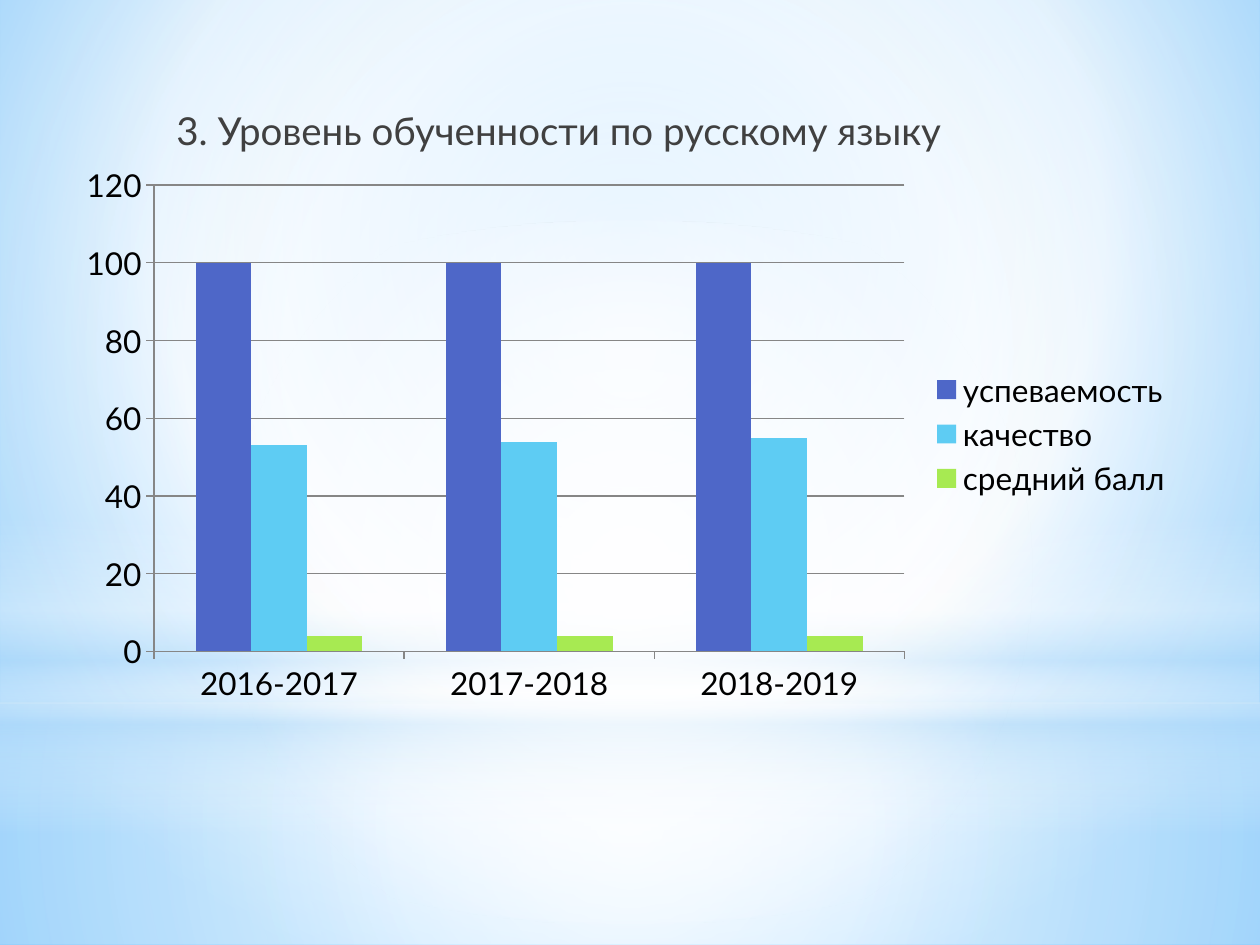
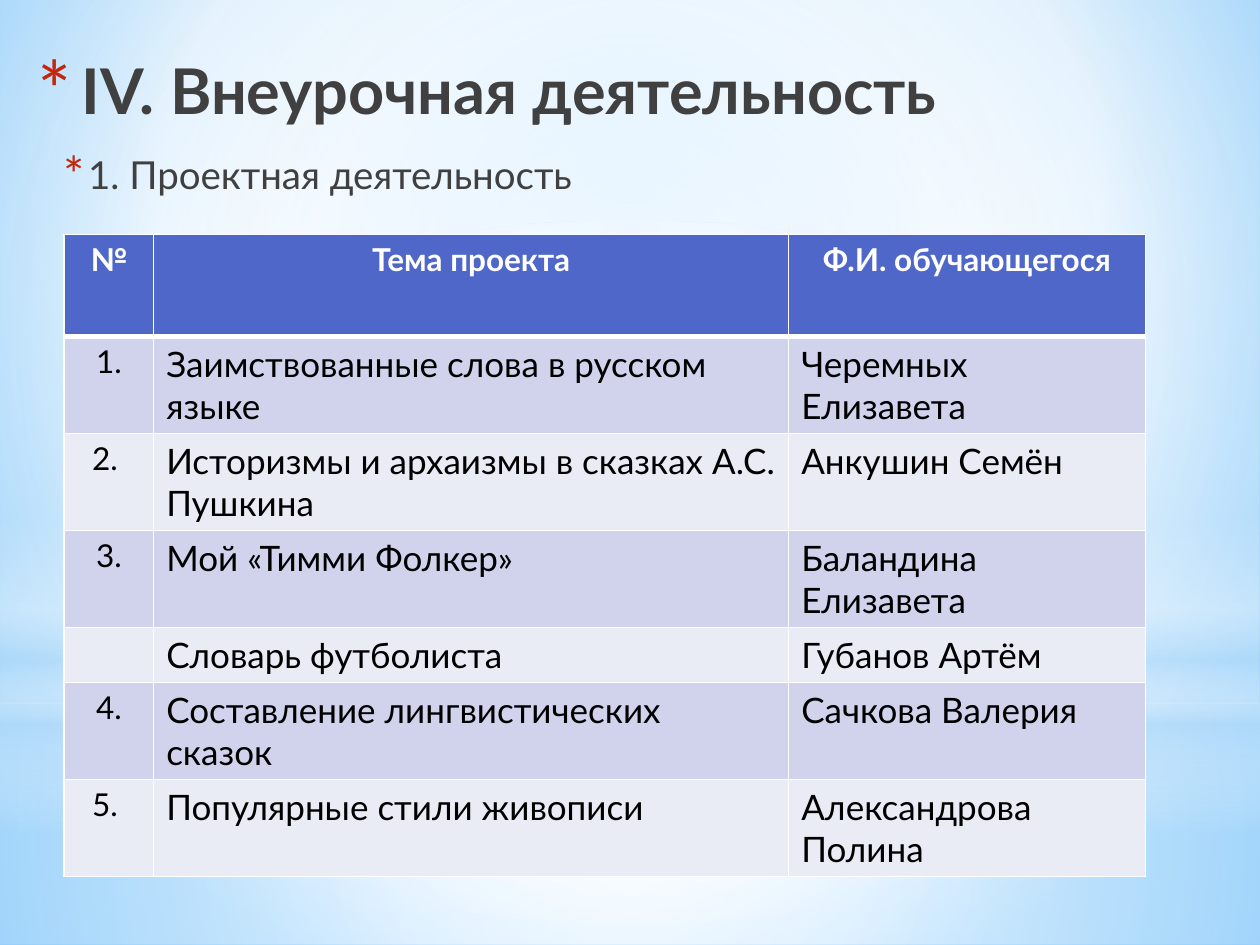
from dataclasses import dataclass
from typing import Optional

from lxml import etree
from pptx import Presentation
from pptx.chart.data import CategoryChartData
from pptx.dml.color import RGBColor
from pptx.enum.chart import XL_CHART_TYPE, XL_LEGEND_POSITION, XL_TICK_MARK
from pptx.enum.shapes import MSO_SHAPE
from pptx.enum.text import MSO_ANCHOR, MSO_AUTO_SIZE, PP_ALIGN
from pptx.oxml import parse_xml
from pptx.oxml.ns import qn
from pptx.util import Inches, Pt

RECTANGLE, ELLIPSE = MSO_SHAPE.RECTANGLE, MSO_SHAPE.OVAL
LEFT, CENTER = PP_ALIGN.LEFT, PP_ALIGN.CENTER
TOP, NO_AUTOFIT = MSO_ANCHOR.TOP, MSO_AUTO_SIZE.NONE
COLUMNS, LEGEND_RIGHT = XL_CHART_TYPE.COLUMN_CLUSTERED, XL_LEGEND_POSITION.RIGHT
TICK_OUTSIDE = XL_TICK_MARK.OUTSIDE
NAMESPACE = "http://schemas.openxmlformats.org/drawingml/2006/main"
FONT = "Lato"
WHITE, BLACK, GREY, PALE_BLUE = "FFFFFF", "000000", "404040", "B4DCFA"
BLUE, RED, AXIS_GREY = "4E67C8", "C3260C", "868686"
STRIPES = ("D0D3EB", "E9EBF5")


@dataclass(frozen=True)
class Gradient:
    """Stops of position, colour and opacity, with an angle or a focus rectangle."""
    stops: tuple
    focus: Optional[tuple] = None
    angle: int = 90


@dataclass(frozen=True)
class Band:
    """A gradient shape behind every slide."""
    kind: int
    box: tuple
    gradient: Gradient


@dataclass(frozen=True)
class Series:
    """One set of columns in the chart."""
    name: str
    values: tuple
    color: str


@dataclass(frozen=True)
class Project:
    """One row of the project table."""
    number: str
    topic: str
    pupil: str
    height: float


MIDDLE = (50, 50, 50, 50)
BACKGROUND = Gradient(((0, "9ED5FF", 100), (60, WHITE, 100), (100, "5BB9FF", 100)), (20, 10, 20, 60))
TITLE_GRADIENT = Gradient(((0, BLACK, 100), (40, GREY, 100), (100, "212745", 65)))
BANDS = (
    Band(RECTANGLE, (0, 5.58, 10, 1.92),
         Gradient(((0, WHITE, 91), (37, WHITE, 76), (100, PALE_BLUE, 79)), MIDDLE)),
    Band(RECTANGLE, (0, 0, 10, 5.58),
         Gradient(((0, WHITE, 89), (48, WHITE, 62), (100, PALE_BLUE, 79)), MIDDLE)),
    Band(RECTANGLE, (0, 4.12, 10, 2.5),
         Gradient(((0, WHITE, 0), (29, WHITE, 30), (45, PALE_BLUE, 40),
                   (55, WHITE, 26), (65, PALE_BLUE, 60), (100, WHITE, 0)))),
    Band(ELLIPSE, (0, 1.75, 10, 5.58), Gradient(((0, WHITE, 100), (56, WHITE, 0)), MIDDLE)),
)
YEARS = ("2016-2017", "2017-2018", "2018-2019")
RESULTS = (
    Series("успеваемость", (100, 100, 100), BLUE),
    Series("качество", (53, 54, 55), "5ECCF3"),
    Series("средний балл", (4, 4, 4), "A7EA52"),
)
HEADER = Project("№", "Тема проекта", "Ф.И. обучающегося", 0.81)
PROJECTS = (
    Project("1.", "Заимствованные слова в русском языке", "Черемных Елизавета", 0.45),
    Project("2. ", "Историзмы и архаизмы в сказках А.С. Пушкина", "Анкушин Семён", 0.63),
    Project("3.", "Мой «Тимми Фолкер»", "Баландина Елизавета", 0.4),
    Project("", "Словарь футболиста", "Губанов Артём", 0.39),
    Project("4.", "Составление лингвистических сказок", "Сачкова Валерия", 0.54),
    Project("5. ", "Популярные стили живописи", "Александрова Полина", 0.47),
)
COLUMN_WIDTHS = (0.71, 5.04, 2.83)


def color_of(value: str) -> RGBColor:
    """Turn a hex string into a colour."""
    return RGBColor.from_string(value)


def inches(box: tuple) -> list:
    """Turn left, top, width and height into lengths."""
    return [Inches(value) for value in box]


def replace_fill(container, gradient: Gradient) -> None:
    """Swap the first solid fill inside the container for a gradient."""
    stops = "".join(
        f'<a:gs pos="{position * 1000}"><a:srgbClr val="{color}">'
        f'<a:alpha val="{opacity * 1000}"/></a:srgbClr></a:gs>'
        for position, color, opacity in gradient.stops)
    if gradient.focus:
        edges = " ".join(f'{side}="{value * 1000}"' for side, value in zip("ltrb", gradient.focus))
        direction = f'<a:path path="circle"><a:fillToRect {edges}/></a:path>'
    else:
        direction = f'<a:lin ang="{gradient.angle * 60000}" scaled="0"/>'
    solid = next(container.iter(qn("a:solidFill")))
    solid.getparent().replace(solid, parse_xml(
        f'<a:gradFill xmlns:a="{NAMESPACE}" rotWithShape="1">'
        f'<a:gsLst>{stops}</a:gsLst>{direction}</a:gradFill>'))


def write_text(frame, text: str, *, size: float, color: str = GREY, bold: bool = False,
               align: int = LEFT, gradient: Optional[Gradient] = None):
    """Write one formatted run and return its paragraph."""
    paragraph = frame.paragraphs[0]
    paragraph.alignment = align
    run = paragraph.add_run()
    run.text = text
    font = run.font
    font.name, font.size, font.bold = FONT, Pt(size), bold
    font.color.rgb = color_of(color)
    if gradient:
        replace_fill(paragraph._p, gradient)
    return paragraph


def set_bullet(paragraph, margin: float, indent: float, percent: int = 0) -> None:
    """Set the indents and a red star bullet, or no bullet when percent is zero."""
    properties = paragraph._p.get_or_add_pPr()
    properties.set("marL", str(Inches(margin)))
    properties.set("indent", str(Inches(indent)))
    if not percent:
        etree.SubElement(properties, qn("a:buNone"))
        return
    bullet_color = etree.SubElement(properties, qn("a:buClr"))
    etree.SubElement(bullet_color, qn("a:srgbClr"), val=RED)
    etree.SubElement(properties, qn("a:buSzPct"), val=str(percent * 1000))
    etree.SubElement(properties, qn("a:buFont"), typeface=FONT)
    etree.SubElement(properties, qn("a:buChar"), char="*")


def place_frame(placeholder, box: tuple):
    """Move a placeholder and return its text frame."""
    placeholder.left, placeholder.top, placeholder.width, placeholder.height = inches(box)
    frame = placeholder.text_frame
    frame.word_wrap, frame.auto_size, frame.vertical_anchor = True, NO_AUTOFIT, TOP
    return frame


def write_subtitle(slide, text: str, box: tuple, margin: float, indent: float, percent: int = 0) -> None:
    """Write the section line into the body placeholder."""
    paragraph = write_text(place_frame(slide.placeholders[1], box), text, size=22)
    paragraph.space_after = Pt(3)
    set_bullet(paragraph, margin, indent, percent)


def decorate_master(master, slide) -> None:
    """Give the master its background and bands, drawn by way of a slide."""
    master.background.fill.solid()
    master.background.fill.fore_color.rgb = color_of(WHITE)
    replace_fill(master.element, BACKGROUND)
    for order, band in enumerate(BANDS):
        shape = slide.shapes.add_shape(band.kind, *inches(band.box))
        shape.shadow.inherit = False
        shape.line.fill.background()
        shape.fill.solid()
        shape.fill.fore_color.rgb = color_of(WHITE)
        replace_fill(shape.element, band.gradient)
        shape.element.nvSpPr.cNvPr.set("id", str(20 + order))
        master.shapes.element.insert(2 + order, shape.element)


def add_results_chart(slide) -> None:
    """Draw the yearly results as clustered columns."""
    data = CategoryChartData()
    data.categories = YEARS
    for result in RESULTS:
        data.add_series(result.name, result.values)
    chart = slide.shapes.add_chart(COLUMNS, *inches((0.51, 1.23, 8.9, 4.43)), data).chart
    chart.font.name, chart.font.size = FONT, Pt(18)
    chart.font.color.rgb = color_of(BLACK)
    chart.has_title = False
    chart.has_legend = True
    chart.legend.position = LEGEND_RIGHT
    chart.legend.include_in_layout = False
    plot = chart.plots[0]
    plot.gap_width, plot.vary_by_categories = 150, False
    for series, result in zip(plot.series, RESULTS):
        series.format.fill.solid()
        series.format.fill.fore_color.rgb = color_of(result.color)
    value_axis = chart.value_axis
    value_axis.minimum_scale, value_axis.maximum_scale, value_axis.major_unit = 0, 120, 20
    value_axis.has_major_gridlines = True
    for axis in (value_axis, chart.category_axis):
        axis.major_tick_mark = TICK_OUTSIDE
    for item in (value_axis, chart.category_axis, value_axis.major_gridlines):
        item.format.line.color.rgb = color_of(AXIS_GREY)
        item.format.line.width = Pt(0.75)


def style_cell(cell, fill: str, top: int, bottom: int) -> None:
    """Fill a cell and draw its white borders, widths in points."""
    cell.fill.solid()
    cell.fill.fore_color.rgb = color_of(fill)
    properties = cell._tc.get_or_add_tcPr()
    for order, (side, width) in enumerate(zip("LRTB", (1, 1, top, bottom))):
        properties.insert(order, parse_xml(
            f'<a:ln{side} xmlns:a="{NAMESPACE}" w="{Pt(width)}"><a:solidFill>'
            f'<a:srgbClr val="{WHITE}"/></a:solidFill></a:ln{side}>'))


def add_project_table(slide) -> None:
    """Draw the table of pupils' projects."""
    rows = (HEADER, *PROJECTS)
    table = slide.shapes.add_table(
        len(rows), len(COLUMN_WIDTHS), *inches((0.51, 1.86, 8.58, 5.08))).table
    for column, width in zip(table.columns, COLUMN_WIDTHS):
        column.width = Inches(width)
    for row_index, project in enumerate(rows):
        header = row_index == 0
        table.rows[row_index].height = Inches(project.height)
        fill = BLUE if header else STRIPES[(row_index - 1) % 2]
        for column_index, text in enumerate((project.number, project.topic, project.pupil)):
            cell = table.cell(row_index, column_index)
            style_cell(cell, fill, 3 if row_index == 1 else 1, 3 if header else 1)
            centered = header or column_index == 0
            if text:
                write_text(cell.text_frame, text, size=18 if centered else 20,
                           color=WHITE if header else BLACK, bold=header,
                           align=CENTER if centered else LEFT)


def build_results_slide(slide) -> None:
    """Build the slide on the level of learning."""
    title = slide.shapes.title.element
    title.getparent().remove(title)
    write_subtitle(slide, "3. Уровень обученности по русскому языку", (1.25, 0.8, 7, 3.8), 0.05, 0)
    add_results_chart(slide)


def build_projects_slide(slide) -> None:
    """Build the slide on project work."""
    frame = place_frame(slide.shapes.title, (0.2, 0.36, 9.53, 1.1))
    paragraph = write_text(frame, "IV. Внеурочная деятельность", size=36, bold=True,
                           gradient=TITLE_GRADIENT)
    set_bullet(paragraph, 0.35, -0.35, 128)
    write_subtitle(slide, "1. Проектная деятельность", (0.35, 1.15, 9.21, 5.75), 0.25, -0.2, 130)
    add_project_table(slide)


def main() -> None:
    """Build and save the presentation."""
    presentation = Presentation()
    presentation.slide_width, presentation.slide_height = Inches(10), Inches(7.5)
    layout = presentation.slide_layouts[1]
    results_slide, projects_slide = (presentation.slides.add_slide(layout) for _ in range(2))
    decorate_master(presentation.slide_master, results_slide)
    build_results_slide(results_slide)
    build_projects_slide(projects_slide)
    presentation.save("out.pptx")


if __name__ == "__main__":
    main()
